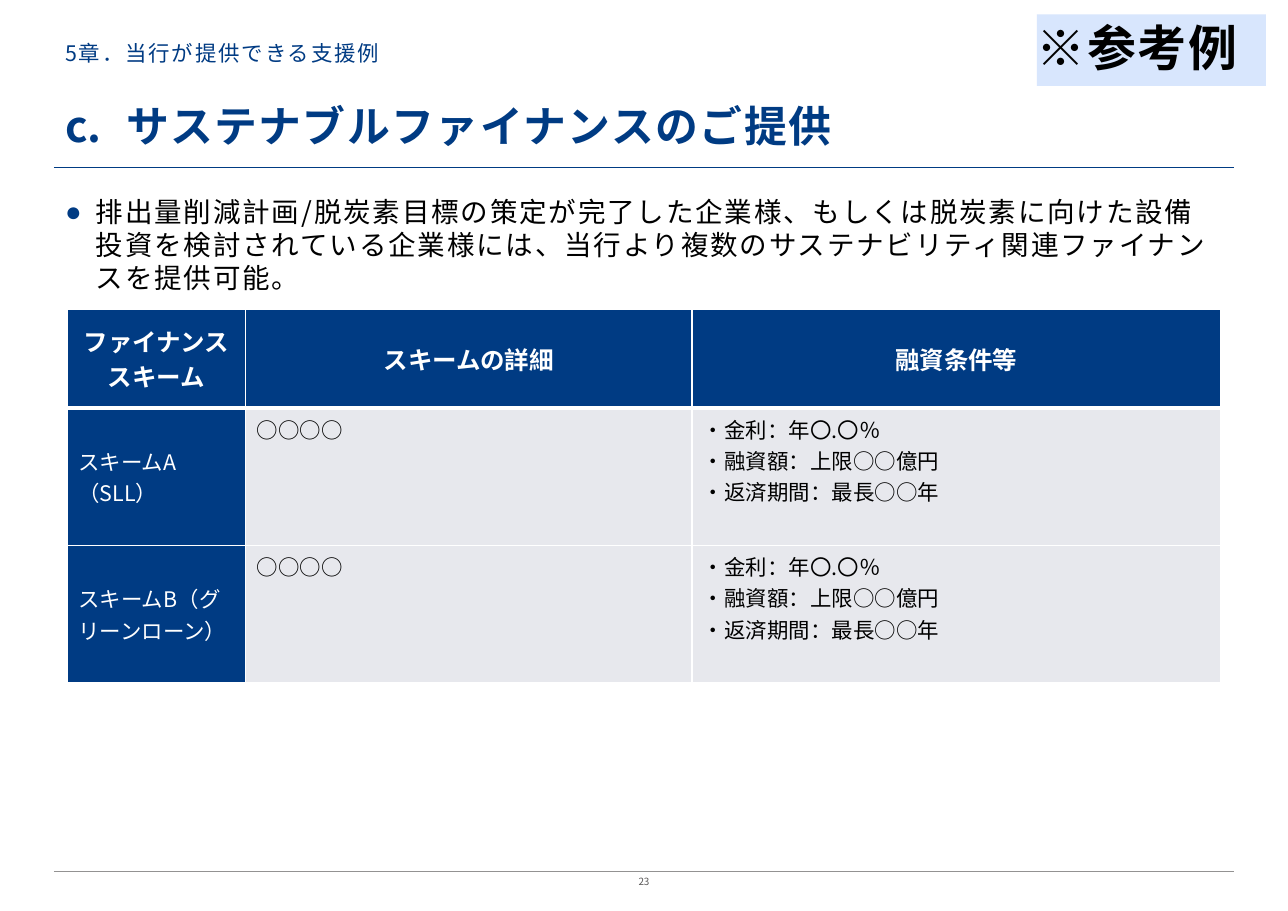
from dataclasses import dataclass

from lxml import etree
from pptx import Presentation
from pptx.dml.color import RGBColor
from pptx.enum.shapes import MSO_CONNECTOR, MSO_SHAPE
from pptx.enum.text import MSO_ANCHOR as Anchor, PP_ALIGN as Align
from pptx.oxml.ns import qn
from pptx.util import Inches, Pt


@dataclass(frozen=True)
class Theme:
    font: str = "Noto Sans CJK JP"
    bullet_font: str = "Arial"
    navy: str = "003B83"
    pale_blue: str = "D8E6FD"
    cell_gray: str = "E7E8ED"
    line_gray: str = "939292"
    page_gray: str = "595757"
    white: str = "FFFFFF"
    black: str = "000000"
    page_size: float = 6.5
    small: float = 14
    header: float = 16
    body: float = 18
    title: float = 28
    tag: float = 32


theme = Theme()


def add_run(paragraph, text, size, color, bold=False, spacing=0):
    run = paragraph.add_run()
    run.text = text
    run.font.name = theme.font
    run.font.size = Pt(size)
    run.font.bold = bold
    run.font.color.rgb = RGBColor.from_string(color)
    properties = run.font._element
    etree.SubElement(properties, qn("a:ea"), typeface=theme.font)
    if spacing:
        properties.set("spc", str(int(spacing * 100)))


def prepare_frame(shape, anchor=Anchor.TOP, top=0, bottom=0):
    frame = shape.text_frame
    frame.word_wrap = True
    frame.vertical_anchor = anchor
    frame.margin_left = frame.margin_right = 0
    frame.margin_top, frame.margin_bottom = Inches(top), Inches(bottom)
    return frame.paragraphs[0]


presentation = Presentation()
presentation.slide_width = Inches(11.69)
presentation.slide_height = Inches(8.27)
slide = presentation.slides.add_slide(presentation.slide_layouts[6])
shapes = slide.shapes

for y, color, width in [(7.91, theme.line_gray, 0.35), (1.52, theme.navy, 0.6)]:
    rule = shapes.add_connector(
        MSO_CONNECTOR.STRAIGHT, Inches(0.49), Inches(y), Inches(11.2), Inches(y))
    rule.line.color.rgb = RGBColor.from_string(color)
    rule.line.width = Pt(width)
    etree.SubElement(rule._element.spPr, qn("a:effectLst"))

page_number = shapes.add_textbox(Inches(5.45), Inches(7.95), Inches(0.79), Inches(0.12))
paragraph = prepare_frame(page_number)
paragraph.alignment = Align.CENTER
add_run(paragraph, "23", theme.page_size, theme.page_gray)

summary = shapes.add_textbox(Inches(0.59), Inches(1.75), Inches(10.51), Inches(0.91))
summary_paragraph = prepare_frame(summary, top=0.02)
heading = shapes.add_textbox(Inches(0.59), Inches(0.92), Inches(10.08), Inches(0.53))
heading_paragraph = prepare_frame(heading, Anchor.BOTTOM, bottom=0.08)

for paragraph, indent, font, tag, settings in [
    (summary_paragraph, 0.28, theme.bullet_font, "a:buChar", {"char": "●"}),
    (heading_paragraph, 0.56, theme.font, "a:buAutoNum",
     {"type": "alphaLcPeriod", "startAt": "3"}),
]:
    properties = paragraph._p.get_or_add_pPr()
    properties.set("marL", str(Inches(indent)))
    properties.set("indent", str(-Inches(indent)))
    bullet_color = etree.SubElement(properties, qn("a:buClr"))
    etree.SubElement(bullet_color, qn("a:srgbClr"), val=theme.navy)
    etree.SubElement(properties, qn("a:buFont"), typeface=font)
    etree.SubElement(properties, qn(tag), **settings)

summary_paragraph.line_spacing = Pt(21.6)
summary_paragraph.space_after = Pt(6)
add_run(summary_paragraph,
        "排出量削減計画/脱炭素目標の策定が完了した企業様、もしくは脱炭素に向けた設備投資を"
        "検討されている企業様には、当行より複数のサステナビリティ関連ファイナンスを提供可能。",
        theme.body, theme.black, spacing=1.2)
add_run(heading_paragraph, "サステナブルファイナンスのご提供",
        theme.title, theme.navy, bold=True, spacing=1)

conditions = ["・金利：年〇.〇％", "・融資額：上限○○億円", "・返済期間：最長○○年"]
schemes = [
    [["ファイナンススキーム"], ["スキームの詳細"], ["融資条件等"]],
    [["スキームA（SLL）"], ["○○○○"], conditions],
    [["スキームB（グリーンローン）"], ["○○○○"], conditions],
]
column_widths = [1.62, 4.05, 4.8]
row_heights = [0.89, 1.25, 1.25]
table = shapes.add_table(
    3, 3, Inches(0.61), Inches(2.81), Inches(10.47), Inches(3.39)).table
for column, width in zip(table.columns, column_widths):
    column.width = Inches(width)
for row, height in zip(table.rows, row_heights):
    row.height = Inches(height)

for row_index, scheme in enumerate(schemes):
    for column_index, lines in enumerate(scheme):
        cell = table.cell(row_index, column_index)
        is_header = row_index == 0
        is_navy = is_header or column_index == 0
        borders = {"L": 1, "R": 1, "T": 3 if row_index == 1 else 1,
                   "B": 3 if is_header else 1}
        properties = cell._tc.get_or_add_tcPr()
        for side, width in borders.items():
            border = etree.SubElement(properties, qn(f"a:ln{side}"), w=str(Pt(width)))
            fill = etree.SubElement(border, qn("a:solidFill"))
            etree.SubElement(fill, qn("a:srgbClr"), val=theme.white)
        cell.fill.solid()
        cell.fill.fore_color.rgb = RGBColor.from_string(
            theme.navy if is_navy else theme.cell_gray)
        cell.vertical_anchor = Anchor.MIDDLE if is_navy else Anchor.TOP
        for line_index, line in enumerate(lines):
            frame = cell.text_frame
            paragraph = frame.add_paragraph() if line_index else frame.paragraphs[0]
            paragraph.alignment = Align.CENTER if is_header else Align.LEFT
            add_run(paragraph, line, theme.header if is_header else theme.small,
                    theme.white if is_navy else theme.black, bold=is_header)

example_tag = shapes.add_shape(
    MSO_SHAPE.RECTANGLE, Inches(9.41), Inches(0.13), Inches(2.08), Inches(0.65))
example_tag.shadow.inherit = False
example_tag.fill.solid()
example_tag.fill.fore_color.rgb = RGBColor.from_string(theme.pale_blue)
example_tag.line.fill.background()
paragraph = prepare_frame(example_tag)
paragraph.alignment = Align.LEFT
paragraph.line_spacing = 1.06
paragraph.space_after = Pt(4)
add_run(paragraph, "※参考例", theme.tag, theme.black, bold=True, spacing=1)

chapter = shapes.add_textbox(Inches(0.59), Inches(0.36), Inches(10.08), Inches(0.24))
add_run(prepare_frame(chapter), "5章．当行が提供できる支援例",
        theme.small, theme.navy, spacing=1.2)

presentation.save("out.pptx")
